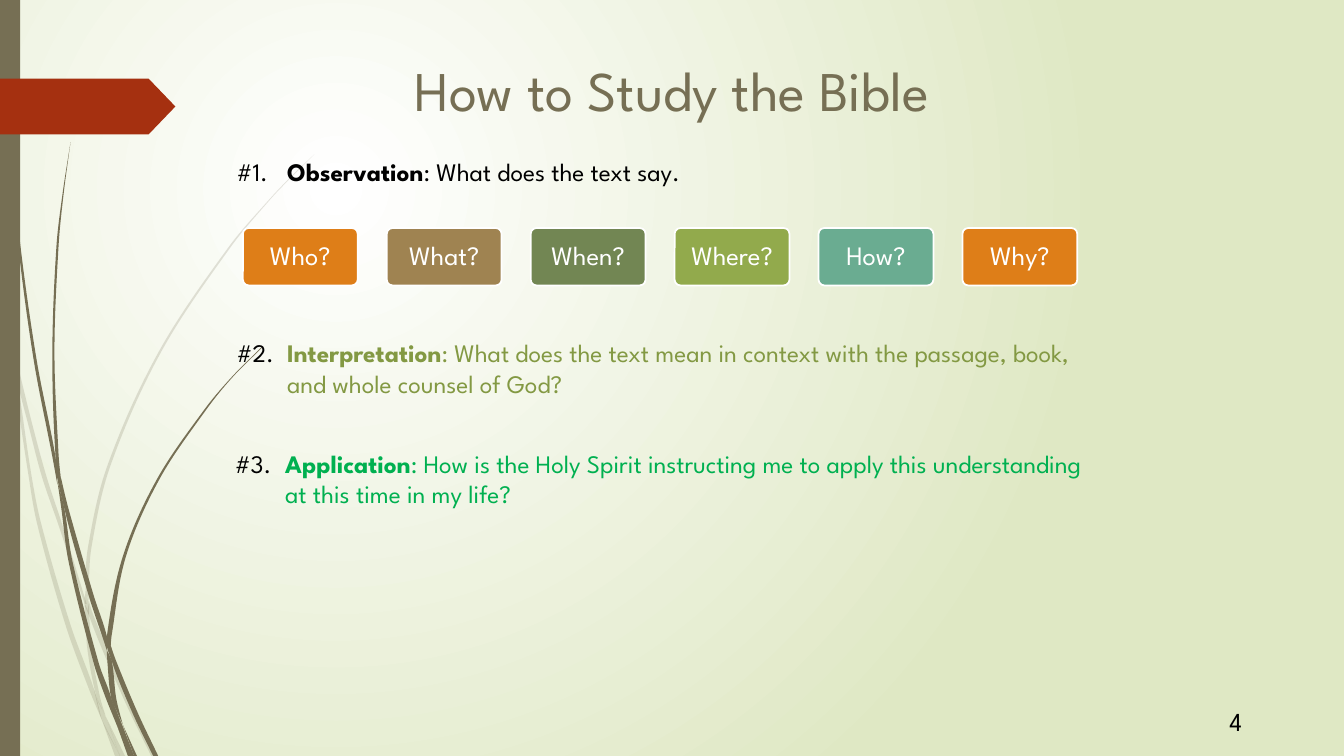
from dataclasses import dataclass

from lxml.etree import SubElement
from pptx import Presentation
from pptx.dml.color import RGBColor
from pptx.enum.shapes import MSO_SHAPE
from pptx.enum.text import MSO_ANCHOR, PP_ALIGN
from pptx.oxml.ns import qn
from pptx.util import Pt


@dataclass(frozen=True)
class Theme:
    font: str = "League Spartan"
    title_size: float = 40
    card_size: float = 19
    number_size: float = 18.5
    body_size: float = 18
    white: str = "FFFFFF"
    black: str = "000000"
    backdrop: str = "DFE8C4"
    olive: str = "766F54"
    ribbon: str = "A53010"
    cards: tuple = ("DE7E18", "9F8351", "728653", "92AA4C", "6AAC91", "DE7E18")
    interpretation: str = "839943"
    application: str = "00B050"


THEME = Theme()

# Grass blade sections: rows of (y, left edge, right edge) in points
FAINT_BLADES = [
    [(203, 0, 0), (215.3, 0, 2.9), (231.8, 3.6, 6.5), (252, 7.9, 7.9)],
    [(248.4, 10.1, 10.1), (270.7, 12.2, 15.1), (306, 20.9, 23.8), (341.3, 30.2, 33.5),
     (375.1, 41.8, 44.6), (431.3, 60.5, 61.9)],
    [(429.1, 63.4, 63.4), (439.2, 63.4, 66.6), (499.7, 88.6, 92.2), (540, 108, 111.6)],
    [(511.9, 75.6, 75.6), (540, 85.7, 89.3)],
    [(252, 7.9, 7.9), (270.7, 10.1, 12.2), (338.4, 20.2, 22.3), (374.4, 26.6, 29.5),
     (446.4, 46.8, 50.4), (491.8, 63.4, 67), (514.1, 72.7, 72.7)],
    [(431.3, 60.5, 60.5), (437.8, 60.7, 63.4), (465.1, 62.6, 65.5), (498.2, 69.1, 71.5),
     (511.9, 75.6, 75.6)],
    [(110.2, 224.6, 224.6), (126, 208.1, 208.8), (141.8, 193, 193.7), (176.4, 163.4, 164.9),
     (250.6, 113.8, 115.6), (331.9, 77, 79.2), (390.2, 63, 65.5), (420.5, 61.2, 63.4),
     (429.1, 63.4, 63.4)],
    [(514.1, 72.7, 72.7), (540, 82.1, 85.7)],
    [(421.9, 61.2, 61.2), (431.3, 60.5, 63.4), (439.2, 63.4, 63.4)],
    [(491.8, 67, 67), (498.2, 68.4, 69.1), (514.1, 72.7, 76.3), (540, 85.7, 85.7)],
]
SOLID_BLADES = [
    [(0, 2.2, 2.9), (34.6, 2.9, 3.6), (79.2, 5, 5.8), (167.8, 12.2, 13.7),
     (255.6, 23.8, 25.9), (326.2, 37.4, 39.6), (346.3, 41, 41)],
    [(339.8, 43.2, 43.2), (363.6, 46.1, 49), (425.5, 63.4, 67), (454.3, 73, 76.3),
     (464.4, 76.3, 76.3)],
    [(461.5, 79.2, 79.2), (472.3, 79.9, 83), (509, 94.5, 98.3), (540, 109.4, 113)],
    [(343.4, 41, 41), (363.6, 43.9, 46.1), (401, 49, 51.8), (473.8, 67, 70.6),
     (497.5, 75.2, 79.2), (519.8, 84.2, 84.2)],
    [(101.5, 50.4, 50.4), (139, 44.6, 45.4), (176.4, 40.3, 41.8), (251.3, 37.4, 38.9),
     (324, 39.6, 41.8), (339.8, 43.2, 43.2)],
    [(517.7, 87.8, 87.8), (540, 95.8, 97.9)],
    [(323.3, 39.6, 39.6), (339.8, 40.6, 43.2), (363.6, 46.1, 46.1)],
    [(247.7, 187.2, 187.9), (269.3, 165.6, 166.3), (292.3, 146.2, 147.6),
     (342, 112.3, 114.1), (397.4, 87.8, 90), (455, 76.3, 79.6), (461.5, 79.2, 79.2)],
    [(519.8, 84.2, 84.2), (540, 91.4, 94.3)],
    [(464.4, 76.3, 76.3), (472.3, 76.7, 79.9), (497.5, 79.2, 82.8), (508.3, 83.5, 85.2),
     (517.7, 87.8, 87.8)],
    [(454.3, 76.3, 76.3), (461.5, 76.3, 79.2), (472.3, 79.9, 79.9)],
    [(497.5, 79.2, 79.2), (508.3, 81.4, 83.5), (519.8, 84.2, 88.1), (540, 94, 95.8)],
]
QUESTIONS = ("Who?", "What?", "When?", "Where?", "How?", "Why?")
CARD_LEFT, CARD_STEP = 173.5, 102.8
STEP_WIDTH, STEP_INDENT = 622, 36

# Left, top, height, number, heading, text, colour
STEPS = [
    (162, 108, 29, "#1.", "Observation", ": What does the text say.", THEME.black),
    (162, 237.6, 51, "#2.", "Interpretation", ": What does the text mean in context with "
     "the passage, book, and whole counsel of God?", THEME.interpretation),
    (160.6, 316.8, 51, "#3.", "Application", ": How is the Holy Spirit instructing me to "
     "apply this understanding at this time in my life?", THEME.application),
]


def set_background(slide):
    fill = slide.background.fill
    fill.gradient()
    for stop, position, color in zip(fill.gradient_stops, (0, 1), (THEME.white, THEME.backdrop)):
        stop.position = position
        stop.color.rgb = RGBColor.from_string(color)
    gradient = slide.element.find(".//" + qn("a:gradFill"))
    gradient.remove(gradient.find(qn("a:lin")))
    circle = SubElement(gradient, qn("a:path"), path="circle")
    SubElement(circle, qn("a:fillToRect"), l="50000", t="50000", r="100000", b="100000")


def paint(shape, color, opacity=1.0):
    shape.shadow.inherit = False
    shape.fill.solid()
    shape.fill.fore_color.rgb = RGBColor.from_string(color)
    shape.line.fill.background()
    if opacity < 1:
        color_element = shape.element.spPr.find(".//" + qn("a:srgbClr"))
        SubElement(color_element, qn("a:alpha"), val=str(int(opacity * 100000)))


def curve_edge(points):
    """Return the start, then two handles and an end for each stretch of (y, x) points."""
    slopes = []
    for index in range(len(points)):
        (y0, x0), (y1, x1) = points[max(index - 1, 0)], points[min(index + 1, len(points) - 1)]
        slopes.append((x1 - x0) / (y1 - y0))
    curve = [points[0]]
    for index, ((y0, x0), (y1, x1)) in enumerate(zip(points, points[1:])):
        third = (y1 - y0) / 3
        curve += [(y0 + third, x0 + slopes[index] * third),
                  (y1 - third, x1 - slopes[index + 1] * third), (y1, x1)]
    return [(Pt(x), Pt(y)) for y, x in curve]


def add_blade(slide, rows, opacity):
    left = curve_edge([(y, left) for y, left, _ in rows])
    right = curve_edge([(y, right) for y, _, right in rows])[::-1]
    builder = slide.shapes.build_freeform(*left[0], scale=1.0)
    builder.add_line_segments(left[1:] + [left[-1], right[0]] + right, close=True)
    shape = builder.convert_to_shape()
    # Join each three straight segments into one curve
    lines = list(shape.element.iter(qn("a:lnTo")))
    for first, second, third in zip(lines[::3], lines[1::3], lines[2::3]):
        first.tag = qn("a:cubicBezTo")
        for line in (second, third):
            first.append(line[0])
            line.getparent().remove(line)
    paint(shape, THEME.olive, opacity)


def add_block(slide, kind, left, top, width, height, color):
    shape = slide.shapes.add_shape(kind, Pt(left), Pt(top), Pt(width), Pt(height))
    paint(shape, color)
    return shape


def add_run(paragraph, text, size, color, bold=False):
    run = paragraph.add_run()
    run.text = text
    run.font.name, run.font.size, run.font.bold = THEME.font, Pt(size), bold
    run.font.color.rgb = RGBColor.from_string(color)


def add_text_box(slide, left, top, width, height, alignment=PP_ALIGN.LEFT, anchor=MSO_ANCHOR.TOP):
    frame = slide.shapes.add_textbox(Pt(left), Pt(top), Pt(width), Pt(height)).text_frame
    frame.word_wrap = True
    frame.vertical_anchor = anchor
    frame.paragraphs[0].alignment = alignment
    return frame.paragraphs[0]


def add_card(slide, left, label, color):
    shape = add_block(slide, MSO_SHAPE.ROUNDED_RECTANGLE, left, 162.9, 82, 41, color)
    shape.adjustments[0] = 0.1
    shape.line.color.rgb = RGBColor.from_string(THEME.white)
    shape.line.width = Pt(1.25)
    frame = shape.text_frame
    frame.margin_left = frame.margin_right = Pt(4)
    frame.margin_top = frame.margin_bottom = Pt(3)
    frame.vertical_anchor = MSO_ANCHOR.MIDDLE
    frame.paragraphs[0].alignment = PP_ALIGN.CENTER
    frame.paragraphs[0].line_spacing = 0.9
    add_run(frame.paragraphs[0], label, THEME.card_size, THEME.white)


def add_step(slide, left, top, height, number, heading, text, color):
    paragraph = add_text_box(slide, left, top, STEP_WIDTH, height)
    properties = paragraph._p.get_or_add_pPr()
    properties.set("marL", str(Pt(STEP_INDENT)))
    properties.set("indent", str(-Pt(STEP_INDENT)))
    add_run(paragraph, number + " \t", THEME.body_size, THEME.black)
    add_run(paragraph, heading, THEME.body_size, color, bold=True)
    add_run(paragraph, text, THEME.body_size, color)


def main():
    presentation = Presentation()
    presentation.slide_width, presentation.slide_height = Pt(960), Pt(540)
    slide = presentation.slides.add_slide(presentation.slide_layouts[6])
    # Background and side decoration
    set_background(slide)
    for blades, opacity in ((FAINT_BLADES, 0.2), (SOLID_BLADES, 1.0)):
        for rows in blades:
            add_blade(slide, rows, opacity)
    add_block(slide, MSO_SHAPE.RECTANGLE, 0, 0, 14.4, 540, THEME.olive)
    ribbon = add_block(slide, MSO_SHAPE.PENTAGON, 0, 56.2, 125.3, 39.8, THEME.ribbon)
    ribbon.adjustments[0] = 0.48
    # Title and slide number
    title = add_text_box(slide, 63.4, 36, 833, 61.2, PP_ALIGN.CENTER)
    add_run(title, "How to Study the Bible", THEME.title_size, THEME.olive)
    number = add_text_box(slide, 678.2, 500.4, 216, 28.8, PP_ALIGN.RIGHT, MSO_ANCHOR.MIDDLE)
    number.space_after = Pt(6)
    add_run(number, "4", THEME.number_size, THEME.black)
    # Question cards and study steps
    for index, (label, color) in enumerate(zip(QUESTIONS, THEME.cards)):
        add_card(slide, CARD_LEFT + index * CARD_STEP, label, color)
    for step in STEPS:
        add_step(slide, *step)
    presentation.save("out.pptx")


if __name__ == "__main__":
    main()
